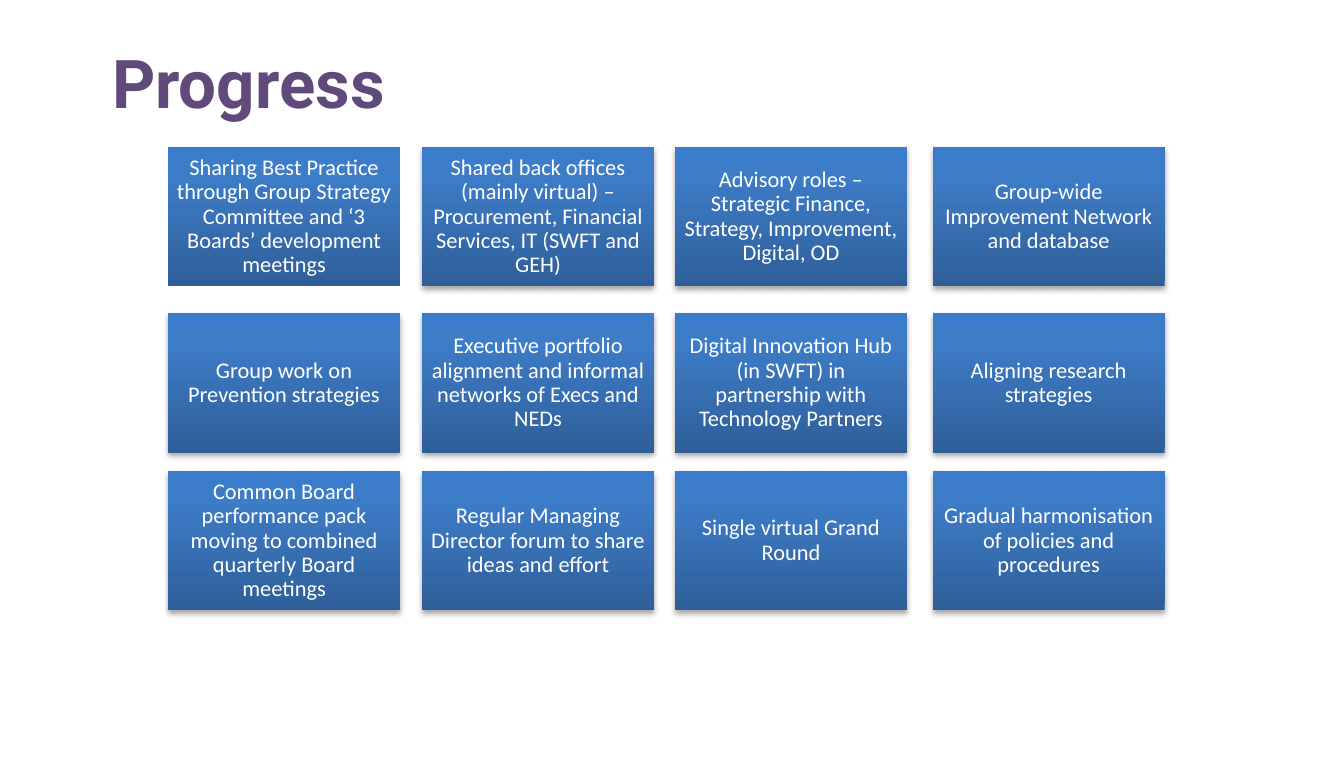
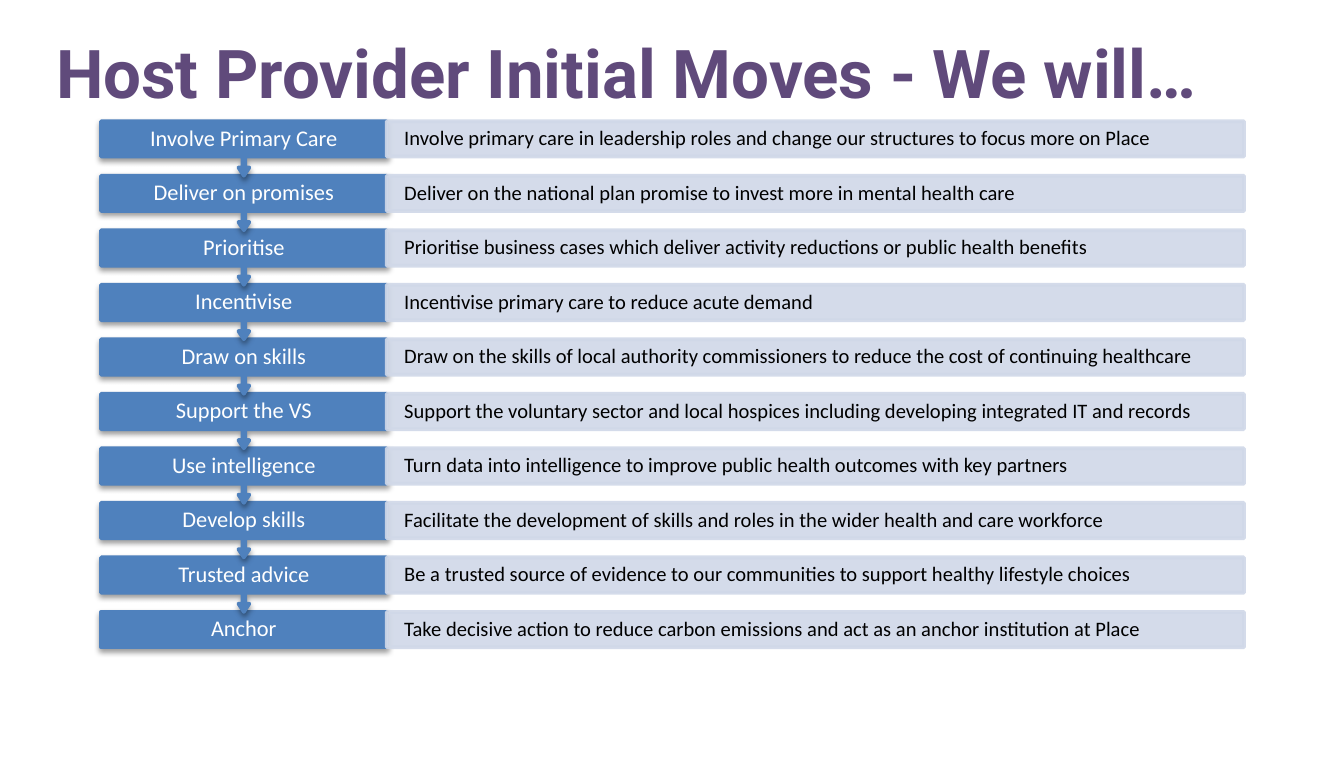
"""Build two slides on group progress and the host provider's initial moves."""
from dataclasses import dataclass
from itertools import product

from lxml import etree
from pptx import Presentation
from pptx.dml.color import RGBColor
from pptx.enum.shapes import MSO_SHAPE
from pptx.enum.text import MSO_ANCHOR, PP_ALIGN
from pptx.oxml.ns import qn
from pptx.util import Cm, Pt

RECTANGLE = MSO_SHAPE.RECTANGLE
DOWN_ARROW_CALLOUT = MSO_SHAPE.DOWN_ARROW_CALLOUT
MIDDLE = MSO_ANCHOR.MIDDLE
LEFT, CENTER = PP_ALIGN.LEFT, PP_ALIGN.CENTER
BLANK_LAYOUT = 6
SLIDE_WIDTH, SLIDE_HEIGHT = 25.4, 14.3


@dataclass(frozen=True)
class Theme:
    """Colours, fonts and type sizes of the slides."""
    title_color: str = "604A7B"
    step_color: str = "4F81BD"
    detail_color: str = "D0D8E8"
    light_text: str = "FFFFFF"
    dark_text: str = "000000"
    shadow_color: str = "000000"
    tile_gradient: tuple = ((0, "2F5F99"), (80, "3D7CC7"), (100, "3A7CCB"))
    gradient_angle: int = 270
    title_font: str = "Roboto"
    body_font: str = "Calibri"
    title_size: int = 36
    label_size: int = 12
    detail_size: int = 11
    line_width: int = 2
    line_spacing: float = 0.9
    detail_opacity: int = 90


THEME = Theme()

TILE_LEFTS = (3.18, 7.98, 12.76, 17.63)
TILE_TOPS = (2.78, 5.92, 8.9)
TILE_WIDTH, TILE_HEIGHT = 4.38, 2.63
TILES = (
    "Sharing Best Practice through Group Strategy Committee and ‘3 Boards’ development meetings",
    "Shared back offices (mainly virtual) – Procurement, Financial Services, IT (SWFT and GEH)",
    "Advisory roles – Strategic Finance, Strategy, Improvement, Digital, OD",
    "Group-wide Improvement Network and database",
    "Group work on Prevention strategies",
    "Executive portfolio alignment and informal networks of Execs and NEDs",
    "Digital Innovation Hub (in SWFT) in partnership with Technology Partners",
    "Aligning research strategies",
    "Common Board performance pack moving to combined quarterly Board meetings",
    "Regular Managing Director forum to share ideas and effort",
    "Single virtual Grand Round",
    "Gradual harmonisation of policies and procedures",
)

STEP_LEFT, STEP_TOP, STEP_WIDTH = 1.91, 2.29, 5.4
STEP_HEIGHT, STEP_PITCH = 0.67, 1.03
DETAIL_WIDTH = 16.2
CALLOUT_ADJUSTMENTS = (0.05, 0.1, 0.15, 0.65)
STEPS = (
    ("Involve Primary Care",
     "Involve primary care in leadership roles and change our structures to focus more on Place"),
    ("Deliver on promises",
     "Deliver on the national plan promise to invest more in mental health care"),
    ("Prioritise",
     "Prioritise business cases which deliver activity reductions or public health benefits"),
    ("Incentivise",
     "Incentivise primary care to reduce acute demand"),
    ("Draw on skills",
     "Draw on the skills of local authority commissioners to reduce the cost of continuing healthcare"),
    ("Support the VS",
     "Support the voluntary sector and local hospices including developing integrated IT and records"),
    ("Use intelligence",
     "Turn data into intelligence to improve public health outcomes with key partners"),
    ("Develop skills",
     "Facilitate the development of skills and roles in the wider health and care workforce"),
    ("Trusted advice",
     "Be a trusted source of evidence to our communities to support healthy lifestyle choices"),
    ("Anchor",
     "Take decisive action to reduce carbon emissions and act as an anchor institution at Place"),
)


def write_text(shape, text, size, color, font=THEME.body_font, bold=False,
               align=LEFT, spacing=None, side_inset=0, end_inset=0):
    """Put one styled paragraph, vertically centred, in a shape."""
    frame = shape.text_frame
    frame.word_wrap = True
    frame.vertical_anchor = MIDDLE
    frame.margin_left = frame.margin_right = Cm(side_inset)
    frame.margin_top = frame.margin_bottom = Cm(end_inset)
    paragraph = frame.paragraphs[0]
    paragraph.text = text
    paragraph.alignment = align
    paragraph.line_spacing = spacing
    paragraph.font.name = font
    paragraph.font.size = Pt(size)
    paragraph.font.bold = bold
    paragraph.font.color.rgb = RGBColor.from_string(color)


def add_box(slide, kind, left, top, width, height):
    """Add a preset shape without a shadow."""
    shape = slide.shapes.add_shape(kind, Cm(left), Cm(top), Cm(width), Cm(height))
    shape.shadow.inherit = False
    return shape


def paint(shape, color):
    """Give a shape a fill and an outline of one colour."""
    shape.fill.solid()
    shape.fill.fore_color.rgb = RGBColor.from_string(color)
    shape.line.color.rgb = RGBColor.from_string(color)
    shape.line.width = Pt(THEME.line_width)


def add_color(parent, color, opacity=100):
    """Append a colour element with an opacity in percent."""
    element = etree.SubElement(parent, qn("a:srgbClr"), val=color)
    etree.SubElement(element, qn("a:alpha"), val=str(opacity * 1000))


def paint_gradient(shape):
    """Fill a shape with the tile gradient and remove its outline."""
    gradient = etree.Element(qn("a:gradFill"), rotWithShape="1")
    stops = etree.SubElement(gradient, qn("a:gsLst"))
    for position, color in THEME.tile_gradient:
        stop = etree.SubElement(stops, qn("a:gs"), pos=str(position * 1000))
        add_color(stop, color)
    etree.SubElement(gradient, qn("a:lin"), ang=str(THEME.gradient_angle * 60000), scaled="0")
    shape.element.spPr.find(qn("a:prstGeom")).addnext(gradient)
    shape.line.fill.background()


def add_shadow(shape, opacity, distance):
    """Drop a soft shadow below a shape."""
    effects = shape.element.spPr.find(qn("a:effectLst"))
    shadow = etree.SubElement(effects, qn("a:outerShdw"), blurRad=str(Pt(3.1)),
                              dist=str(Pt(distance)), dir=str(90 * 60000), rotWithShape="0")
    add_color(shadow, THEME.shadow_color, opacity)


def make_translucent(shape, opacity):
    """Set the opacity of a shape's fill and outline."""
    for color in shape.element.spPr.iter(qn("a:srgbClr")):
        etree.SubElement(color, qn("a:alpha"), val=str(opacity * 1000))


def add_title(slide, text, left, top, width, height):
    """Add the slide title."""
    box = slide.shapes.add_textbox(Cm(left), Cm(top), Cm(width), Cm(height))
    write_text(box, text, THEME.title_size, THEME.title_color, THEME.title_font, bold=True)


def add_tile(slide, text, left, top, shadowed):
    """Add one gradient tile of the progress grid."""
    tile = add_box(slide, RECTANGLE, left, top, TILE_WIDTH, TILE_HEIGHT)
    paint_gradient(tile)
    if shadowed:
        add_shadow(tile, opacity=35, distance=1.8)
    write_text(tile, text, THEME.label_size, THEME.light_text, align=CENTER,
               spacing=THEME.line_spacing, side_inset=0.12, end_inset=0.12)


def add_step(slide, label, detail, top, is_last):
    """Add one step: its label, an arrow to the next step and its detail bar."""
    kind, height = (RECTANGLE, STEP_HEIGHT) if is_last else (DOWN_ARROW_CALLOUT, STEP_PITCH)
    step = add_box(slide, kind, STEP_LEFT, top, STEP_WIDTH, height)
    if not is_last:
        for index, value in enumerate(CALLOUT_ADJUSTMENTS):
            step.adjustments[index] = value
    paint(step, THEME.step_color)
    add_shadow(step, opacity=38, distance=1.6)
    write_text(step, label, THEME.label_size, THEME.light_text, align=CENTER,
               spacing=THEME.line_spacing, side_inset=0.38)

    bar = add_box(slide, RECTANGLE, STEP_LEFT + STEP_WIDTH, top, DETAIL_WIDTH, STEP_HEIGHT)
    paint(bar, THEME.detail_color)
    make_translucent(bar, THEME.detail_opacity)
    write_text(bar, detail, THEME.detail_size, THEME.dark_text,
               spacing=THEME.line_spacing, side_inset=0.33)


def build_progress(slide):
    """Fill the slide with the grid of progress tiles."""
    add_title(slide, "Progress", 2.12, 0.6, 17.17, 1.9)
    for index, (text, (top, left)) in enumerate(zip(TILES, product(TILE_TOPS, TILE_LEFTS))):
        add_tile(slide, text, left, top, shadowed=index > 0)


def build_initial_moves(slide):
    """Fill the slide with the chain of steps, lowest first so arrows lie on top."""
    add_title(slide, "Host Provider Initial Moves - We will…", 1.06, 0.17, 22.86, 2.38)
    last = len(STEPS) - 1
    for index, (label, detail) in reversed(list(enumerate(STEPS))):
        add_step(slide, label, detail, STEP_TOP + index * STEP_PITCH, index == last)


def main():
    """Build and save the presentation."""
    presentation = Presentation()
    presentation.slide_width = Cm(SLIDE_WIDTH)
    presentation.slide_height = Cm(SLIDE_HEIGHT)
    for build in (build_progress, build_initial_moves):
        build(presentation.slides.add_slide(presentation.slide_layouts[BLANK_LAYOUT]))
    presentation.save("out.pptx")


if __name__ == "__main__":
    main()
